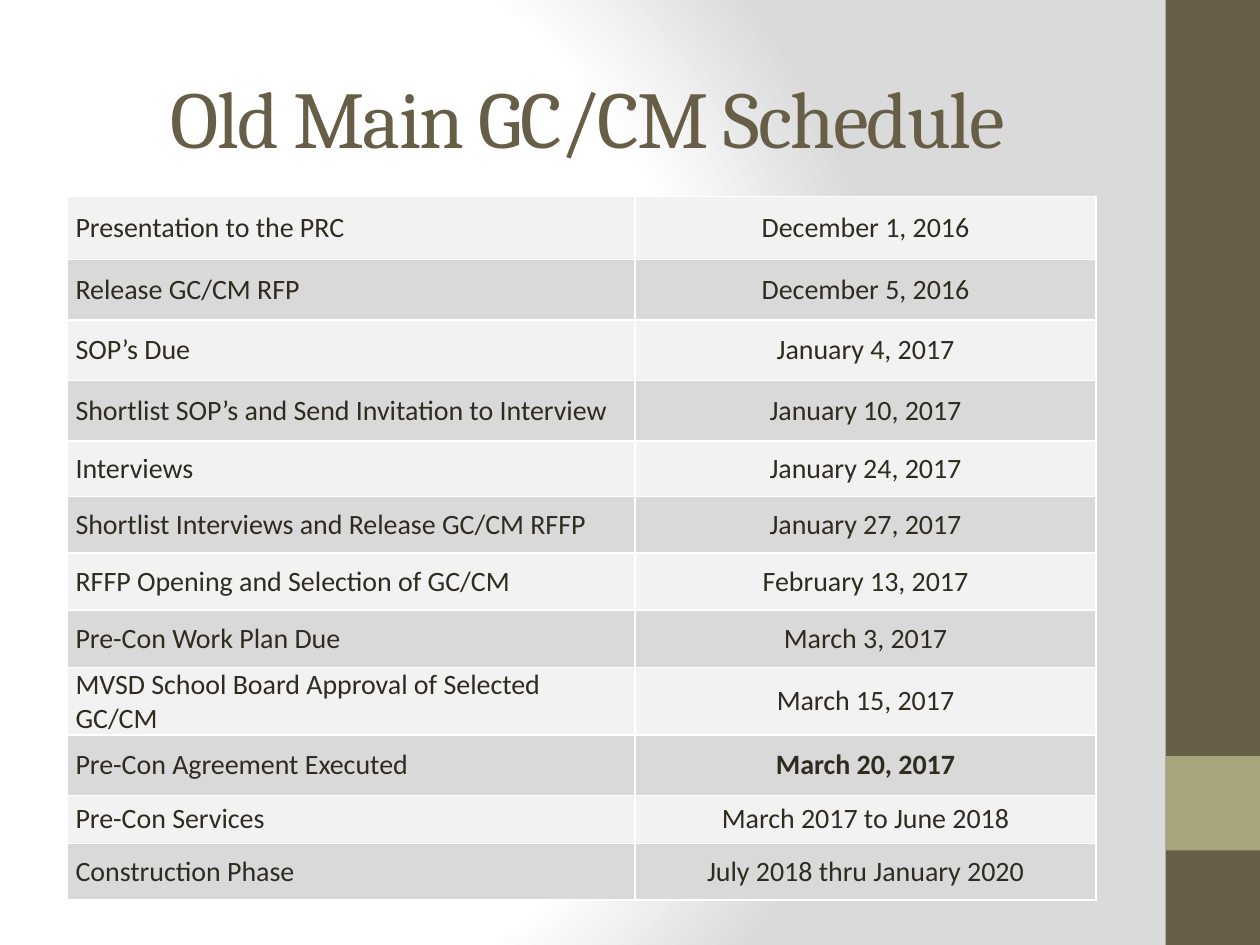
import pptx
import pptx.dml.color
import pptx.enum.shapes
import pptx.enum.text
import pptx.oxml
import pptx.oxml.ns
import pptx.util
from dataclasses import dataclass

WIDE, HIGH = 10, 7.5
INK = {"brown": "675E47", "olive": "A9A57C", "text": "2F2B20", "white": "FFFFFF",
       "pale": "F2F2F2", "grey": "D9D9D9", "edge": "DADADA"}
ALIGN = pptx.enum.text.PP_ALIGN
MIDDLE = pptx.enum.text.MSO_ANCHOR.MIDDLE
NS = pptx.oxml.ns.nsdecls("a", "p")
Inches = pptx.util.Inches


@dataclass
class Band:
    top: float   # share of slide height
    high: float  # share of slide height
    ink: str


@dataclass
class Step:
    task: str
    date: str
    high: float
    bold: bool = False


BANDS = [Band(0, 1, "brown"), Band(0.8, 0.1, "olive")]
COLS = [4.51, 3.66]
STEPS = [
    Step("Presentation to the PRC", "December 1, 2016", 0.5),
    Step("Release GC/CM RFP", "December 5, 2016", 0.48),
    Step("SOP’s Due", "January 4, 2017", 0.48),
    Step("Shortlist SOP’s and Send Invitation to Interview", "January 10, 2017", 0.48),
    Step("Interviews", "January 24, 2017", 0.44),
    Step("Shortlist Interviews and Release GC/CM RFFP", "January 27, 2017", 0.45),
    Step("RFFP Opening and Selection of GC/CM", "February 13, 2017", 0.45),
    Step("Pre-Con Work Plan Due", "March 3, 2017", 0.46),
    Step("MVSD School Board Approval of Selected GC/CM", "March 15, 2017", 0.42),
    Step("Pre-Con Agreement Executed", "March 20, 2017", 0.48, bold=True),
    Step("Pre-Con Services", "March 2017 to June 2018", 0.38),
    Step("Construction Phase", "July 2018 thru January 2020", 0.45),
]


def tint(name: str) -> pptx.dml.color.RGBColor:
    return pptx.dml.color.RGBColor.from_string(INK[name])


def write(frame, text: str, *, size=16, font="Calibri", ink="text",
          align=ALIGN.LEFT, bold=False, space=0) -> None:
    frame.word_wrap = True
    line = frame.paragraphs[0]
    line.alignment = align
    run = line.add_run()
    run.text = text
    run.font.size = pptx.util.Pt(size)
    run.font.name = font
    run.font.bold = bold
    run.font.color.rgb = tint(ink)
    if space:
        run.font._element.set("spc", str(space * 100))


def backdrop(slide) -> None:
    stops = "".join(
        f'<a:gs pos="{pos * 1000}"><a:srgbClr val="{INK[ink]}"/></a:gs>'
        for pos, ink in [(0, "white"), (75, "white"), (100, "edge")])
    slide._element.cSld.insert(0, pptx.oxml.parse_xml(
        f'<p:bg {NS}><p:bgPr><a:gradFill rotWithShape="1"><a:gsLst>{stops}</a:gsLst>'
        '<a:path path="circle"><a:fillToRect l="20000" t="50000" r="100000" b="50000"/>'
        '</a:path></a:gradFill><a:effectLst/></p:bgPr></p:bg>'))


def block(slide, band: Band) -> None:
    shape = slide.shapes.add_shape(
        pptx.enum.shapes.MSO_SHAPE.RECTANGLE, Inches(9.25), Inches(band.top * HIGH),
        Inches(0.75), Inches(band.high * HIGH))
    shape.shadow.inherit = False
    shape.fill.solid()
    shape.fill.fore_color.rgb = tint(band.ink)
    shape.line.fill.background()


def edges(cell) -> None:
    props = cell._tc.get_or_add_tcPr()
    for spot, side in enumerate("LRTB"):
        props.insert(spot, pptx.oxml.parse_xml(
            f'<a:ln{side} {NS} w="12700"><a:solidFill>'
            f'<a:srgbClr val="{INK["white"]}"/></a:solidFill></a:ln{side}>'))


def fill(cell, text: str, ink: str, **style) -> None:
    cell.margin_left = cell.margin_right = Inches(0.07)
    cell.margin_top = cell.margin_bottom = 0
    cell.vertical_anchor = MIDDLE
    cell.fill.solid()
    cell.fill.fore_color.rgb = tint(ink)
    edges(cell)
    write(cell.text_frame, text, **style)


def schedule(slide) -> None:
    table = slide.shapes.add_table(
        len(STEPS), len(COLS), Inches(0.53), Inches(1.56), Inches(sum(COLS)),
        Inches(sum(step.high for step in STEPS))).table
    table.first_row = table.horz_banding = False
    for col, wide in zip(table.columns, COLS):
        col.width = Inches(wide)
    for num, step in enumerate(STEPS):
        table.rows[num].height = Inches(step.high)
        ink = "grey" if num % 2 else "pale"
        fill(table.cell(num, 0), step.task, ink)
        fill(table.cell(num, 1), step.date, ink, align=ALIGN.CENTER, bold=step.bold)


def main() -> None:
    deck = pptx.Presentation()
    deck.slide_width, deck.slide_height = Inches(WIDE), Inches(HIGH)
    slide = deck.slides.add_slide(deck.slide_layouts[6])

    # Background and side bands
    backdrop(slide)
    for band in BANDS:
        block(slide, band)

    # Title
    title = slide.shapes.add_textbox(
        Inches(0.5), Inches(0.04 * HIGH), Inches(8.33), Inches(1.25)).text_frame
    title.vertical_anchor = MIDDLE
    write(title, "Old Main GC/CM Schedule", size=46, font="Cambria",
          ink="brown", align=ALIGN.CENTER, space=-1)

    # Table of dates
    schedule(slide)
    deck.save("out.pptx")


if __name__ == "__main__":
    main()
